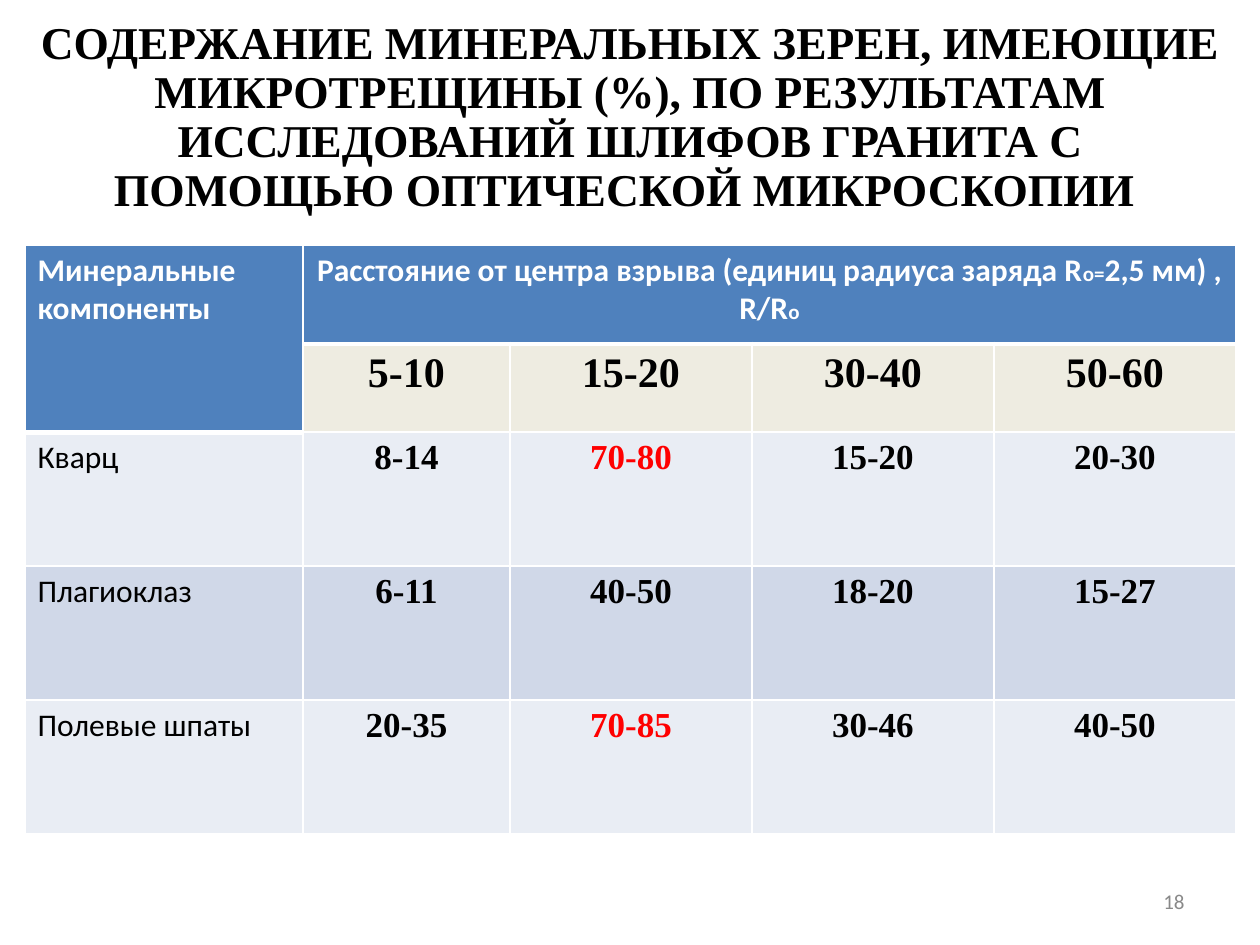
from lxml import etree
from pptx import Presentation
from pptx.dml.color import RGBColor
from pptx.enum.text import MSO_ANCHOR, MSO_AUTO_SIZE, PP_ALIGN
from pptx.oxml.ns import qn
from pptx.util import Pt

PX = 914400 / 126
LEFT, CENTER, RIGHT = PP_ALIGN.LEFT, PP_ALIGN.CENTER, PP_ALIGN.RIGHT
MIDDLE = MSO_ANCHOR.MIDDLE
SHRINK = MSO_AUTO_SIZE.TEXT_TO_FIT_SHAPE
SANS, SERIF = "Calibri", "Times New Roman"
COLORS = {
    "black": "000000", "white": "FFFFFF", "red": "FF0000", "gray": "898989",
    "head": "4F81BD", "sub": "EEECE1", "light": "E9EDF4", "dark": "D0D8E8",
}


def style(para, face, size, color, bold=False, align=LEFT):
    para.alignment = align
    font = para.font
    font.name, font.size, font.bold = face, Pt(size), bold
    font.color.rgb = RGBColor.from_string(COLORS[color])


def edge(cell):
    """Draw white cell borders with a thick bottom line."""
    props = cell._tc.get_or_add_tcPr()
    for side, width in (("L", 1), ("R", 1), ("T", 1), ("B", 3)):
        line = etree.SubElement(props, qn("a:ln" + side), w=str(Pt(width)))
        fill = etree.SubElement(line, qn("a:solidFill"))
        etree.SubElement(fill, qn("a:srgbClr"), val=COLORS["white"])


prs = Presentation()
prs.slide_width, prs.slide_height = round(1260 * PX), round(945 * PX)
slide = prs.slides.add_slide(prs.slide_layouts[5])

# Title
title = slide.shapes.title
title.left, title.top = round(25 * PX), 0
title.width, title.height = round(1211 * PX), round(224 * PX)
frame = title.text_frame
frame.text = (
    "СОДЕРЖАНИЕ МИНЕРАЛЬНЫХ ЗЕРЕН, ИМЕЮЩИЕ МИКРОТРЕЩИНЫ (%), "
    "ПО РЕЗУЛЬТАТАМ ИССЛЕДОВАНИЙ ШЛИФОВ ГРАНИТА С ПОМОЩЬЮ "
    "ОПТИЧЕСКОЙ МИКРОСКОПИИ "
)
frame.vertical_anchor = MIDDLE
frame.auto_size = SHRINK
frame._txBody.bodyPr.find(qn("a:normAutofit")).set("fontScale", "90000")
style(frame.paragraphs[0], SERIF, 28, "black", True, CENTER)

# Slide number
box = slide.shapes.add_textbox(*(round(n * PX) for n in (903, 876, 294, 50)))
frame = box.text_frame
frame.text = "18"
frame.word_wrap = True
frame.vertical_anchor = MIDDLE
style(frame.paragraphs[0], SANS, 12, "gray", align=RIGHT)

# Table grid
cols = [278, 207, 242, 242, 242]
rows = [99, 63, 134, 134, 134]
area = (25, 245, sum(cols), sum(rows))
table = slide.shapes.add_table(
    len(rows), len(cols), *(round(n * PX) for n in area)
).table
for col, width in zip(table.columns, cols):
    col.width = round(width * PX)
for row, height in zip(table.rows, rows):
    row.height = round(height * PX)

# Header cells
name, span = table.cell(0, 0), table.cell(0, 1)
name.merge(table.cell(1, 0))
span.merge(table.cell(0, 4))
name.text = "Минеральные\nкомпоненты"
for para in name.text_frame.paragraphs:
    style(para, SANS, 18, "white", True)
para = span.text_frame.paragraphs[0]
style(para, SANS, 18, "white", True, CENTER)
parts = [
    ("Расстояние от центра взрыва (единиц радиуса заряда R", 18),
    ("o=", 12), ("2,5 мм) , R/R", 18), ("o", 12),
]
for text, size in parts:
    run = para.add_run()
    run.text = text
    run.font.size = Pt(size)
for cell in (name, span):
    edge(cell)
    cell.fill.solid()
    cell.fill.fore_color.rgb = RGBColor.from_string(COLORS["head"])

# Body cells
data = [
    ["", "5-10", "15-20", "30-40", "50-60"],
    ["Кварц", "8-14", "70-80", "15-20", "20-30"],
    ["Плагиоклаз", "6-11", "40-50", "18-20", "15-27"],
    ["Полевые шпаты", "20-35", "70-85", "30-46", "40-50"],
]
peaks = {"70-80", "70-85"}
fills = ["sub", "light", "dark", "light"]
for r, (line, fill) in enumerate(zip(data, fills), 1):
    for c, text in enumerate(line):
        if not text:
            continue
        cell = table.cell(r, c)
        cell.text = text
        cell.fill.solid()
        cell.fill.fore_color.rgb = RGBColor.from_string(COLORS[fill])
        para = cell.text_frame.paragraphs[0]
        if c == 0:
            style(para, SANS, 18, "black")
        else:
            color = "red" if text in peaks else "black"
            style(para, SERIF, 24 if r == 1 else 20, color, True, CENTER)

prs.save("out.pptx")
